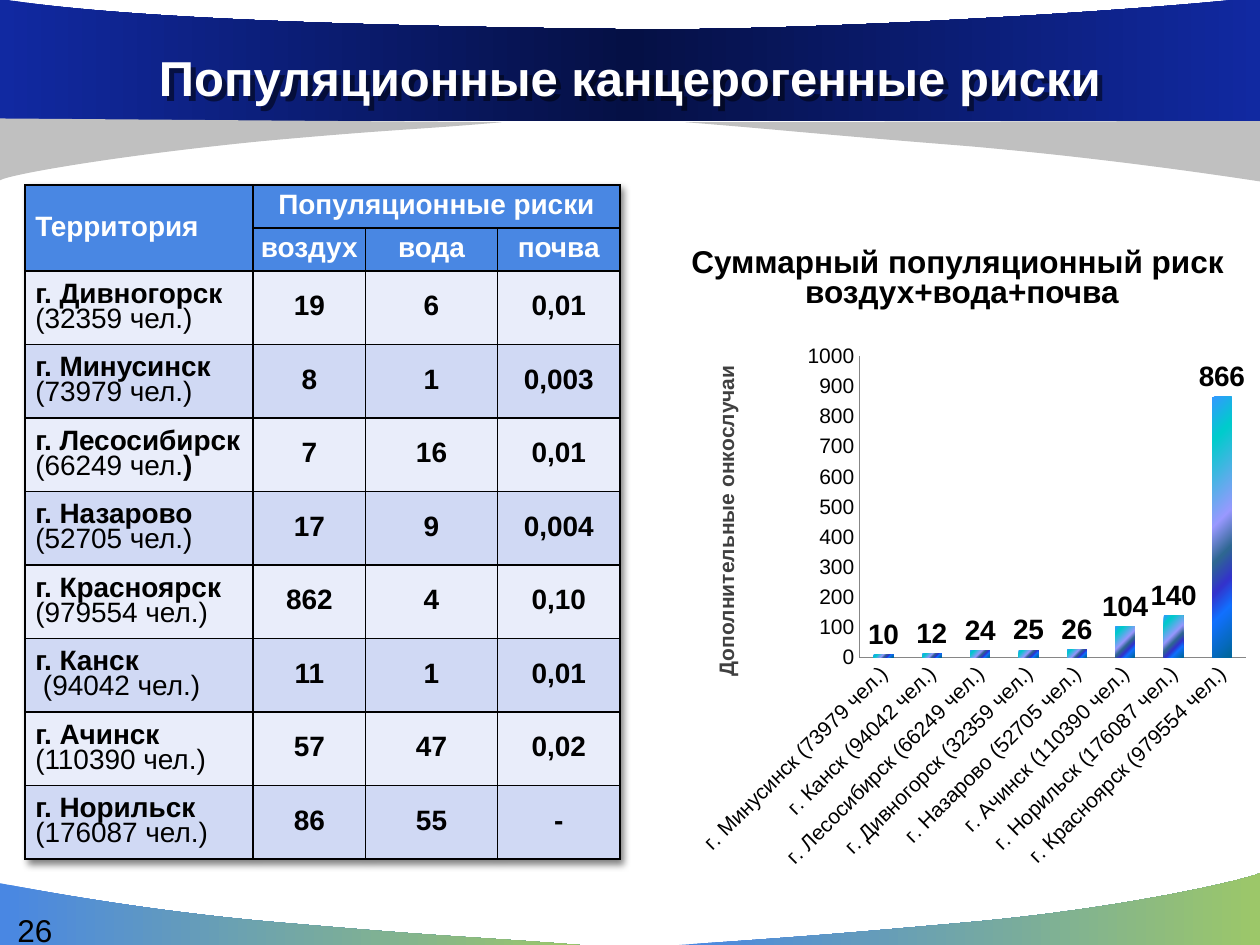
from lxml import etree
from pptx import Presentation, util as u
from pptx.chart.data import CategoryChartData
from pptx.dml.color import RGBColor
from pptx.enum import chart as charts, text
from pptx.oxml import parse_xml
from pptx.oxml.ns import nsdecls, qn

WIDTH, HEIGHT = 10, 7.5
CHART_AREA = (WIDTH / 2, 2.66, WIDTH / 2, 4.32)
FONT = "Arial"
BLACK, WHITE = RGBColor(0, 0, 0), RGBColor(255, 255, 255)
DARK_GRAY, SILVER = RGBColor(0x40, 0x40, 0x40), RGBColor(0xC0, 0xC0, 0xC0)
AXIS_GRAY = RGBColor(0x86, 0x86, 0x86)
BLUE, GREEN = RGBColor(0x49, 0x87, 0xE3), RGBColor(0x9C, 0xC7, 0x69)
NAVY, DEEP_NAVY = RGBColor(0x11, 0x29, 0xA1), RGBColor(0x05, 0x10, 0x45)
BANDS = [RGBColor(0xE9, 0xED, 0xFA), RGBColor(0xD0, 0xD9, 0xF4)]
FOOTER_STOPS = [(0, BLUE), (100, GREEN)]
HEADER_STOPS = [(0, NAVY), (50, DEEP_NAVY), (100, NAVY)]
BAR_STOPS = [(0, RGBColor(0x33, 0x99, 0xFF)), (16, RGBColor(0, 0xCC, 0xCC)),
             (47, RGBColor(0x99, 0x99, 0xFF)), (60, RGBColor(0x2E, 0x67, 0x92)),
             (71, RGBColor(0x33, 0x33, 0xCC)), (81, RGBColor(0x11, 0x70, 0xFF)),
             (100, RGBColor(0, 0x66, 0x99))]

# A wave is a start point followed by lines (2 numbers) and curves (6 numbers).
WAVES = [
    (FOOTER_STOPS, [(4.6, 7.5), (3.84, 7.44, 3.58, 7.44, 2.32, 7.33),
                    (1.06, 7.23, 0.02, 7.01, 0, 7.01), (0, 7.5)]),
    (FOOTER_STOPS, [(5.39, 7.5), (6.14, 7.45, 6.46, 7.43, 7.69, 7.32),
                    (8.92, 7.21, 9.9, 6.98, 10, 6.93), (10, 7.5)]),
    (SILVER, [(5.44, 0.97), (6.2, 1.03, 6.42, 1.06, 7.68, 1.16),
              (8.94, 1.27, 9.99, 1.44, 10, 1.44), (10, 0.96)]),
    (HEADER_STOPS, [(0, 0.96), (10, 0.96), (10, -0.03),
                    (9.64, 0.04, 6.53, 0.26, 4.87, 0.23),
                    (3.21, 0.21, 1.01, 0.16, 0, -0.01)]),
    (SILVER, [(3.98, 0.97), (3.31, 1.03, 3.18, 1.02, 2.08, 1.12),
              (0.97, 1.23, 0.09, 1.38, 0, 1.43), (0, 0.94)]),
]
POPULATION = {"Дивногорск": 32359, "Минусинск": 73979, "Лесосибирск": 66249,
              "Назарово": 52705, "Красноярск": 979554, "Канск": 94042,
              "Ачинск": 110390, "Норильск": 176087}
RISKS = [("19", "6", "0,01"), ("8", "1", "0,003"), ("7", "16", "0,01"),
         ("17", "9", "0,004"), ("862", "4", "0,10"), ("11", "1", "0,01"),
         ("57", "47", "0,02"), ("86", "55", "-")]
TOTALS = {"Минусинск": 10, "Канск": 12, "Лесосибирск": 24, "Дивногорск": 25,
          "Назарово": 26, "Ачинск": 104, "Норильск": 140, "Красноярск": 866}


def style(font, size, color=BLACK, bold=False):
    font.name, font.size, font.bold = FONT, u.Pt(size), bold
    font.color.rgb = color


def fill_gradient(fill, element, stops, angle=0):
    fill.gradient()
    fill.gradient_angle = angle
    stop_list = element.find(".//" + qn("a:gsLst"))
    for old in list(stop_list):
        stop_list.remove(old)
    for percent, color in stops:
        stop = etree.SubElement(stop_list, qn("a:gs"), pos=str(percent * 1000))
        etree.SubElement(stop, qn("a:srgbClr"), val=str(color))


def shadow_xml(blur, distance, alpha):
    """Return a shadow to the lower right; lengths in points, alpha in percent."""
    return parse_xml(
        f'<a:effectLst {nsdecls("a")}><a:outerShdw blurRad="{u.Pt(blur)}" '
        f'dist="{u.Pt(distance)}" dir="{45 * 60000}" algn="tl" rotWithShape="0">'
        f'<a:srgbClr val="000000"><a:alpha val="{alpha * 1000}"/></a:srgbClr>'
        '</a:outerShdw></a:effectLst>')


def add_wave(page, paint, outline):
    parts = [[round(value * 100) for value in part] for part in outline]
    corners = [part[-2:] for part in parts]
    origin = [min(values) for values in zip(*corners)]
    builder = page.shapes.build_freeform(*corners[0], scale=u.Inches(0.01))
    builder.add_line_segments(corners[1:], close=True)
    wave = builder.convert_to_shape()
    for segment, part in zip(list(wave.element.iter(qn("a:lnTo"))), parts[1:]):
        if len(part) == 6:
            bend(segment, part, origin)
    wave.shadow.inherit = False
    wave.line.fill.background()
    if paint == SILVER:
        wave.fill.solid()
        wave.fill.fore_color.rgb = paint
    else:
        fill_gradient(wave.fill, wave.element.spPr, paint)


def bend(segment, curve, origin):
    """Turn a straight segment of an outline into a cubic curve."""
    segment.tag = qn("a:cubicBezTo")
    for old in list(segment):
        segment.remove(old)
    for x, y in zip(curve[::2], curve[1::2]):
        etree.SubElement(segment, qn("a:pt"), x=str(x - origin[0]), y=str(y - origin[1]))


def add_heading(page, area, lines, size, color, spacing):
    box = page.shapes.add_textbox(*map(u.Inches, area))
    frame = box.text_frame
    frame.word_wrap = True
    frame.vertical_anchor = text.MSO_ANCHOR.MIDDLE
    frame.margin_left = frame.margin_right = frame.margin_top = frame.margin_bottom = 0
    frame.text = "\n".join(lines)
    for para in frame.paragraphs:
        para.alignment, para.line_spacing = text.PP_ALIGN.CENTER, spacing
        style(para.runs[0].font, size, color, True)
    return box


def add_page_number(page, number):
    box = page.shapes.add_textbox(*map(u.Inches, (0.04, 7.18, 0.67, 0.2)))
    box.text_frame.word_wrap = True
    box.text_frame.text = number
    style(box.text_frame.paragraphs[0].runs[0].font, 18)


def fill_cell(cell, paragraphs, fill, color=BLACK, centered=True):
    """Fill a cell; each paragraph is a list of (words, bold) spans."""
    cell.fill.solid()
    cell.fill.fore_color.rgb = fill
    cell.vertical_anchor = text.MSO_ANCHOR.MIDDLE
    cell.margin_left = u.Inches(0.01 if centered else 0.08)
    cell.margin_right = cell.margin_top = u.Inches(0.01)
    cell.margin_bottom = 0
    for index, spans in enumerate(paragraphs):
        frame = cell.text_frame
        para = frame.add_paragraph() if index else frame.paragraphs[0]
        para.alignment = text.PP_ALIGN.CENTER if centered else text.PP_ALIGN.LEFT
        para.line_spacing = 0.8
        for words, bold in spans:
            span = para.add_run()
            span.text = words
            style(span.font, 16, color, bold)


def add_borders(cell):
    props = cell._tc.get_or_add_tcPr()
    for index, side in enumerate(("lnL", "lnR", "lnT", "lnB")):
        props.insert(index, parse_xml(
            f'<a:{side} {nsdecls("a")} w="{u.Pt(1)}"><a:solidFill>'
            f'<a:srgbClr val="{BLACK}"/></a:solidFill></a:{side}>'))


def city_spans(city):
    name, people = f"г. {city}", f"({POPULATION[city]} чел.)"
    if city == "Канск":
        return [[(name, True)], [(" " + people, False)]]
    if city == "Лесосибирск":
        return [[(name + " ", True), (people[:-1], False), (")", True)]]
    return [[(name + " ", True), (people, False)]]


def add_risk_table(page):
    height, header = 5.35, 0.34
    area = map(u.Inches, (0.2, 1.47, 4.72, height))
    table = page.shapes.add_table(len(RISKS) + 2, 4, *area).table
    table.first_row = table.horz_banding = False
    table._tbl.tblPr.insert(0, shadow_xml(4, 3, 50))
    for column, width in zip(table.columns, (1.81, 0.89, 1.05, 0.97)):
        column.width = u.Inches(width)
    for index, row in enumerate(table.rows):
        row.height = u.Inches(header if index < 2 else (height - 2 * header) / len(RISKS))
    headers = [["Территория", "Популяционные риски", "", ""],
               ["", "воздух", "вода", "почва"]]
    for r, names in enumerate(headers):
        for c, name in enumerate(names):
            spans = [[(name, True)]] if name else []
            fill_cell(table.cell(r, c), spans, BLUE, WHITE, centered=c > 0)
    for r, (city, risks) in enumerate(zip(POPULATION, RISKS)):
        band = BANDS[r % 2]
        fill_cell(table.cell(r + 2, 0), city_spans(city), band, centered=False)
        for c, risk in enumerate(risks, 1):
            fill_cell(table.cell(r + 2, c), [[(risk, True)]], band)
    for cell in table.iter_cells():
        add_borders(cell)
    table.cell(0, 0).merge(table.cell(1, 0))
    table.cell(0, 1).merge(table.cell(0, 3))


def place(element, successors, **lengths):
    """Lay out a chart part by inches from the chart's corner."""
    for old in element.findall(qn("c:layout")):
        element.remove(old)
    whole = dict(x=CHART_AREA[2], w=CHART_AREA[2], y=CHART_AREA[3], h=CHART_AREA[3])
    target = '<c:layoutTarget val="inner"/>' if "w" in lengths else ""
    modes = "".join(f'<c:{key}Mode val="edge"/>' for key in ("x", "y"))
    values = "".join(f'<c:{key} val="{part / whole[key]}"/>' for key, part in lengths.items())
    element.insert_element_before(parse_xml(
        f'<c:layout {nsdecls("c")}><c:manualLayout>{target}{modes}{values}'
        '</c:manualLayout></c:layout>'), *successors)


def add_risk_chart(page):
    data = CategoryChartData(number_format="0")
    data.categories = [f"г. {city} ({POPULATION[city]} чел.)" for city in TOTALS]
    data.add_series("Series 1", list(TOTALS.values()))
    area = map(u.Inches, CHART_AREA)
    chart = page.shapes.add_chart(charts.XL_CHART_TYPE.COLUMN_CLUSTERED, *area, data).chart
    chart.has_legend = chart.has_title = False
    style(chart.font, 18)
    plot = chart.plots[0]
    plot.vary_by_categories, plot.gap_width = False, 150
    bars = plot.series[0]
    fill_gradient(bars.format.fill, bars._element, BAR_STOPS, 315)
    plot.has_data_labels = True
    labels = plot.data_labels
    labels.show_value, labels.number_format = True, "0"
    labels.number_format_is_linked = False
    labels.position = charts.XL_LABEL_POSITION.OUTSIDE_END
    style(labels.font, 16, bold=True)
    for axis in (chart.category_axis, chart.value_axis):
        axis.major_tick_mark = axis.minor_tick_mark = charts.XL_TICK_MARK.NONE
        axis.has_major_gridlines = False
        axis.format.line.color.rgb = AXIS_GRAY
        style(axis.tick_labels.font, 12)
    chart.category_axis._element.find(".//" + qn("a:bodyPr")).set("rot", str(-45 * 60000))
    values = chart.value_axis
    values.minimum_scale, values.maximum_scale, values.major_unit = 0, 1000, 100
    values.tick_labels.number_format = "0"
    values.tick_labels.number_format_is_linked = False
    title = values.axis_title
    title.text_frame.text = "Дополнительные онкослучаи"
    style(title.text_frame.paragraphs[0].runs[0].font, 12, DARK_GRAY, True)
    place(title._element, ("c:overlay", "c:spPr", "c:txPr"), x=0.63, y=0.21)
    place(chart._chartSpace.chart.plotArea, ("c:barChart",), x=1.82, y=0.17, w=3.07, h=2.39)


def main():
    deck = Presentation()
    deck.slide_width, deck.slide_height = u.Inches(WIDTH), u.Inches(HEIGHT)
    page = deck.slides.add_slide(deck.slide_layouts[6])
    for paint, outline in WAVES:
        add_wave(page, paint, outline)
    title = add_heading(page, (0, 0.31, WIDTH, 0.68), ["Популяционные канцерогенные риски"],
                        28, WHITE, 0.85)
    title.element.spPr.append(shadow_xml(0, 4, 50))
    add_risk_table(page)
    add_heading(page, (5.39, 1.87, 4.42, 0.7),
                ["Суммарный популяционный риск", " воздух+вода+почва"], 18, BLACK, 0.8)
    add_risk_chart(page)
    add_page_number(page, "26")
    deck.save("out.pptx")


if __name__ == "__main__":
    main()
